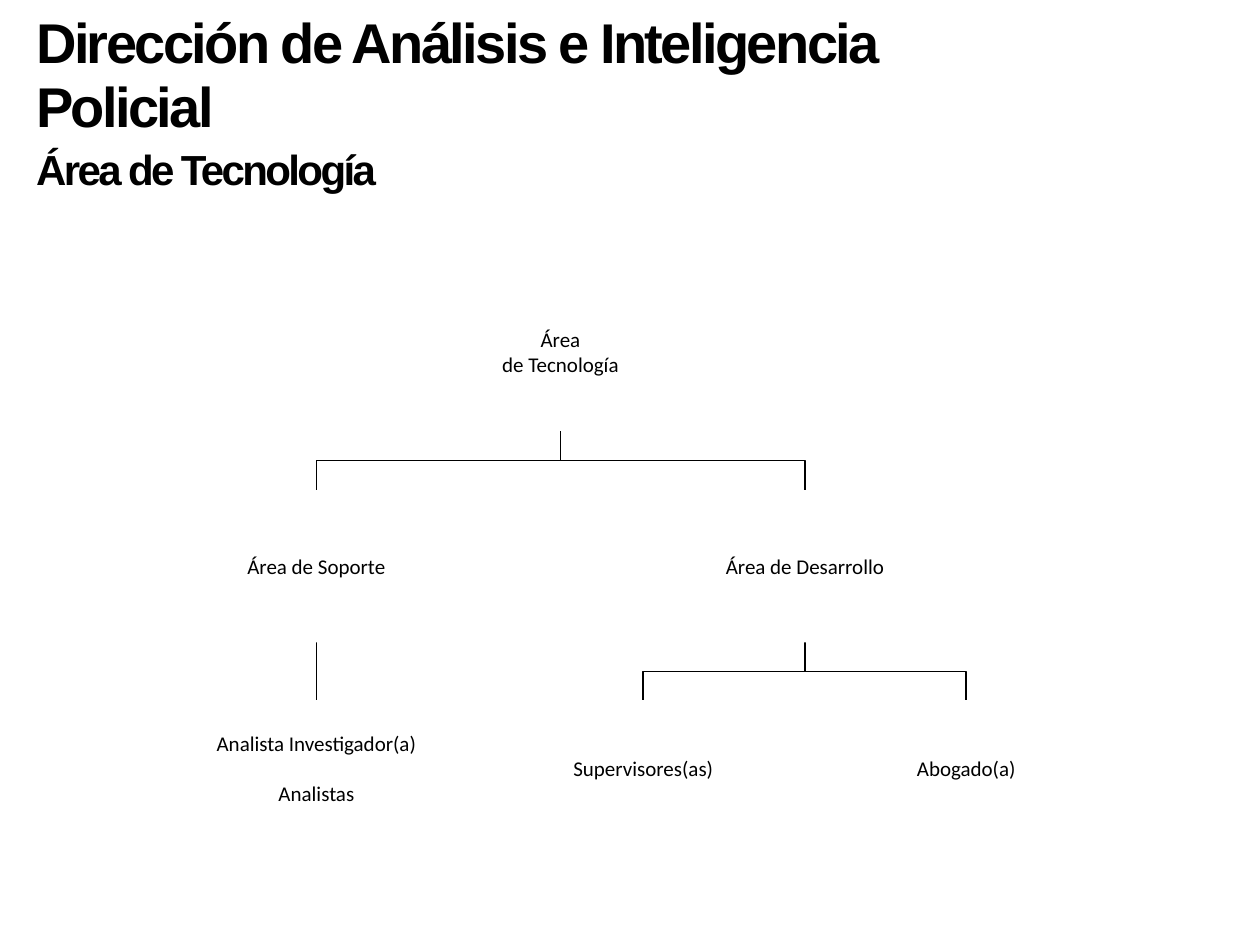
from pptx import Presentation
from pptx.dml.color import RGBColor
from pptx.enum import shapes, text
from pptx.util import Cm, Pt

COLORS = {"ink": "000000", "box": "FFFFFF"}
TITLE = [
    ("Dirección de Análisis e Inteligencia Policial", 32, 0.95, 0),
    ("Área de Tecnología", 24, 1.0, 2),
]
ROWS = [(5.49, 3.2), (9.88, 3.07), (14.12, 2.73)]
BOXES = {
    "area": (0, 11.3, 9.12, ["Área", "de Tecnología"], 0),
    "support": (1, 6.38, 6.15, ["Área de Soporte"], 0),
    "development": (1, 16.23, 6.15, ["Área de Desarrollo"], 0),
    "analysts": (2, 6.38, 5.49, ["Analista Investigador(a)", "Analistas"], 14.6),
    "supervisors": (2, 12.97, 5.33, ["Supervisores(as)"], 0),
    "lawyer": (2, 19.48, 5.33, ["Abogado(a)"], 0),
}
LINKS = [
    ("area", "support"),
    ("area", "development"),
    ("support", "analysts"),
    ("development", "supervisors"),
    ("development", "lawyer"),
]


def color(name):
    return RGBColor.from_string(COLORS[name])


def write(paragraph, content, size=12, font="Calibri", bold=False, tracking=0,
          align=text.PP_ALIGN.CENTER, line_spacing=1.0, before=0):
    paragraph.alignment = align
    paragraph.line_spacing = line_spacing
    paragraph.space_before = Pt(before)
    run = paragraph.add_run()
    run.text = content
    run.font.size = Pt(size)
    run.font.name = font
    run.font.bold = bold
    run.font.color.rgb = color("ink")
    if tracking:
        run.font._element.set("spc", str(round(tracking * 100)))


def paragraphs(frame, count):
    return [frame.paragraphs[0]] + [frame.add_paragraph() for _ in range(count - 1)]


def add_title(slide):
    frame = slide.shapes.add_textbox(Cm(0.48), Cm(0.13), Cm(18.95), Cm(3.73)).text_frame
    frame.word_wrap = True
    for paragraph, (content, size, spacing, before) in zip(paragraphs(frame, len(TITLE)), TITLE):
        write(paragraph, content, size=size, font="Arial", bold=True, tracking=-1.5,
              align=text.PP_ALIGN.LEFT, line_spacing=spacing, before=before)


def add_link(slide, parent, child):
    row, start_x = BOXES[parent][:2]
    end_x = BOXES[child][1]
    start_y = sum(ROWS[row])
    end_y = ROWS[row + 1][0]
    if start_x == end_x:
        link = slide.shapes.add_connector(
            shapes.MSO_CONNECTOR.STRAIGHT, Cm(start_x), Cm(start_y), Cm(end_x), Cm(end_y))
        properties = link._element.spPr
    else:
        middle = (start_y + end_y) / 2
        builder = slide.shapes.build_freeform(Cm(start_x), Cm(start_y))
        corners = [(start_x, middle), (end_x, middle), (end_x, end_y)]
        builder.add_line_segments([(Cm(x), Cm(y)) for x, y in corners], close=False)
        link = builder.convert_to_shape()
        link.fill.background()
        link.shadow.inherit = False
    link.line.color.rgb = color("ink")
    link.line.width = Pt(1)
    if start_x == end_x:
        effects = "{http://schemas.openxmlformats.org/drawingml/2006/main}effectLst"
        properties.append(properties.makeelement(effects, {}))


def add_box(slide, row, center, width, lines, gap):
    top, height = ROWS[row]
    shape = slide.shapes.add_shape(
        shapes.MSO_SHAPE.RECTANGLE, Cm(center - width / 2), Cm(top), Cm(width), Cm(height))
    shape.shadow.inherit = False
    shape.line.fill.background()
    if row:
        shape.fill.solid()
        shape.fill.fore_color.rgb = color("box")
    else:
        shape.fill.background()
    frame = shape.text_frame
    frame.word_wrap = True
    frame.vertical_anchor = text.MSO_ANCHOR.MIDDLE
    frame.margin_left = frame.margin_right = Cm(0.02)
    frame.margin_top = frame.margin_bottom = Cm(0.02)
    for index, paragraph in enumerate(paragraphs(frame, len(lines))):
        write(paragraph, lines[index], before=gap if index else 0)


def main():
    presentation = Presentation()
    presentation.slide_width = Cm(25.4)
    presentation.slide_height = Cm(19.05)
    slide = presentation.slides.add_slide(presentation.slide_layouts[6])
    add_title(slide)
    for parent, child in LINKS:
        add_link(slide, parent, child)
    for box in BOXES.values():
        add_box(slide, *box)
    presentation.save("out.pptx")


if __name__ == "__main__":
    main()
